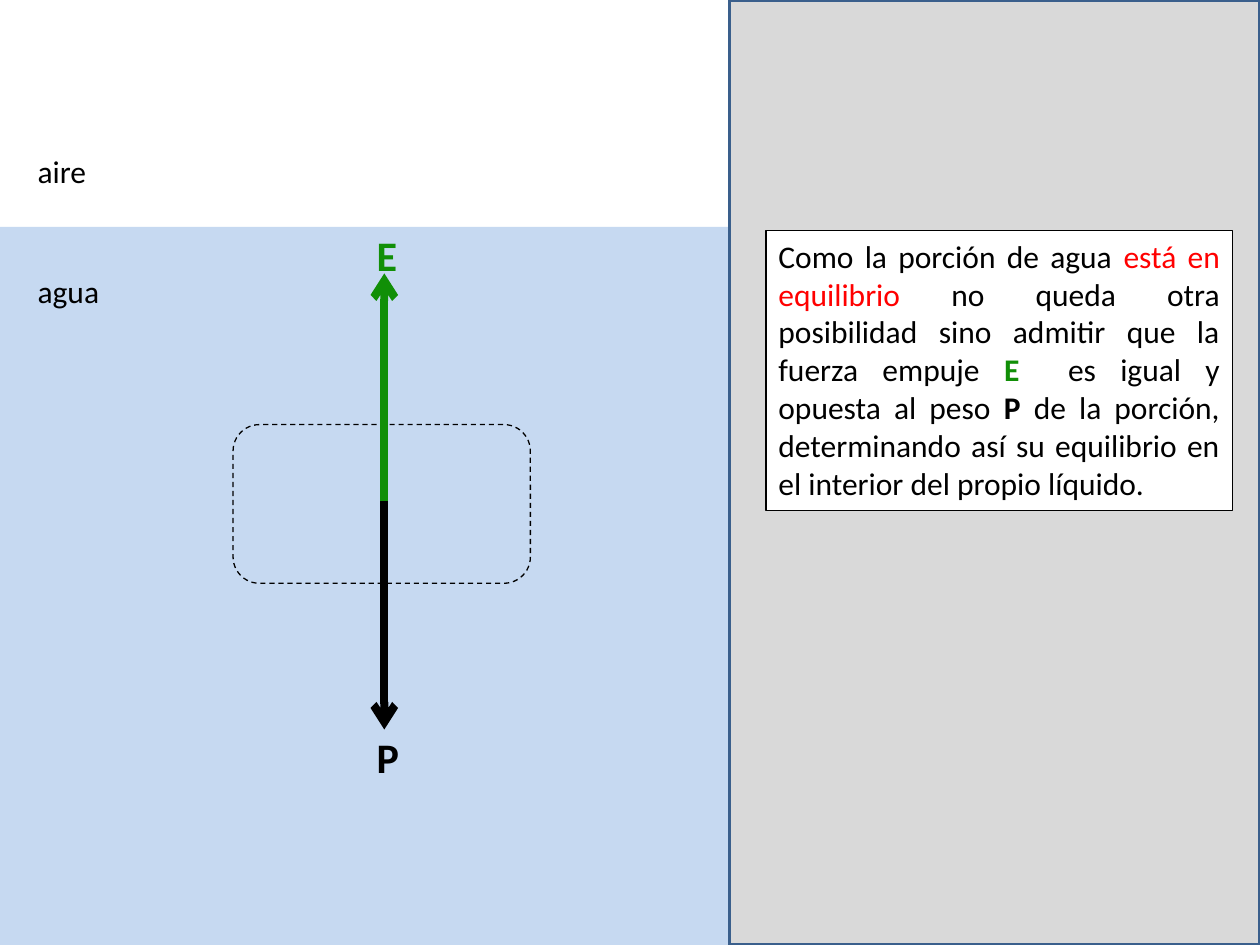
from lxml import etree
from pptx import Presentation
from pptx.dml.color import RGBColor
from pptx.enum.dml import MSO_LINE
from pptx.enum.shapes import MSO_CONNECTOR, MSO_SHAPE
from pptx.enum.text import MSO_ANCHOR, MSO_AUTO_SIZE, PP_ALIGN
from pptx.oxml.ns import qn
from pptx.util import Inches, Pt

RECTANGLE = MSO_SHAPE.RECTANGLE
ROUNDED = MSO_SHAPE.ROUNDED_RECTANGLE
STRAIGHT = MSO_CONNECTOR.STRAIGHT
DASH = MSO_LINE.DASH
TOP = MSO_ANCHOR.TOP
FIT_SHAPE = MSO_AUTO_SIZE.SHAPE_TO_FIT_TEXT
LEFT, JUSTIFY = PP_ALIGN.LEFT, PP_ALIGN.JUSTIFY

WHITE = RGBColor(0xFF, 0xFF, 0xFF)
BLACK = RGBColor(0, 0, 0)
RED = RGBColor(0xFF, 0, 0)
GREEN = RGBColor(0x11, 0x8F, 0x07)
WATER = RGBColor(0xC6, 0xD9, 0xF1)
PANEL = RGBColor(0xD9, 0xD9, 0xD9)
PANEL_EDGE = RGBColor(0x3A, 0x5F, 0x8C)

FONT = "Calibri"
SLIDE_WIDTH, SLIDE_HEIGHT = 10, 7.5
WATER_TOP = 1.8
PANEL_LEFT = 5.79
FORCE_X, FORCE_Y, FORCE_LENGTH = 3.05, 3.98, 1.81

EXPLANATION = [
    ("Como la porción de agua ", BLACK, False),
    ("está en equilibrio", RED, False),
    (" no queda otra posibilidad sino admitir que la fuerza empuje ", BLACK, False),
    ("E", GREEN, True),
    ("  es igual y opuesta al peso ", BLACK, False),
    ("P ", BLACK, True),
    ("de la porción, determinando así su equilibrio en el interior "
     "del propio líquido. ", BLACK, False),
]


def add_block(shapes, kind, left, top, width, height,
              fill=None, edge=None, weight=0.75):
    block = shapes.add_shape(kind, Inches(left), Inches(top),
                             Inches(width), Inches(height))
    block.shadow.inherit = False
    if fill is None:
        block.fill.background()
    else:
        block.fill.solid()
        block.fill.fore_color.rgb = fill
    if edge is None:
        block.line.fill.background()
    else:
        block.line.color.rgb = edge
        block.line.width = Pt(weight)
    return block


def write_text(box, spans, size=18, align=LEFT, wrap=True):
    """Fill a box with one paragraph of (text, colour, bold) spans."""
    frame = box.text_frame
    frame.word_wrap = wrap
    frame.auto_size = FIT_SHAPE
    frame.vertical_anchor = TOP
    para = frame.paragraphs[0]
    para.alignment = align
    for text, colour, bold in spans:
        span = para.add_run()
        span.text = text
        span.font.name = FONT
        span.font.size = Pt(size)
        span.font.bold = bold
        span.font.color.rgb = colour


def add_label(shapes, text, left, top, width, height,
              size=18, colour=BLACK, bold=False):
    box = shapes.add_textbox(Inches(left), Inches(top),
                             Inches(width), Inches(height))
    write_text(box, [(text, colour, bold)], size)


def add_force(shapes, name, direction, label_top, colour):
    """Group a vertical arrow (direction 1 is down, -1 is up) with its name."""
    group = shapes.add_group_shape()
    arrow = group.shapes.add_connector(
        STRAIGHT, Inches(FORCE_X), Inches(FORCE_Y),
        Inches(FORCE_X), Inches(FORCE_Y + direction * FORCE_LENGTH))
    arrow.line.color.rgb = colour
    arrow.line.width = Pt(4.5)
    etree.SubElement(arrow.line._get_or_add_ln(), qn("a:tailEnd"), type="arrow")
    etree.SubElement(arrow._element.spPr, qn("a:effectLst"))
    add_label(group.shapes, name, 2.89, label_top, 0.79, 0.5, 24, colour, True)


def main():
    deck = Presentation()
    deck.slide_width = Inches(SLIDE_WIDTH)
    deck.slide_height = Inches(SLIDE_HEIGHT)
    shapes = deck.slides.add_slide(deck.slide_layouts[6]).shapes

    add_block(shapes, RECTANGLE, 0, WATER_TOP, PANEL_LEFT,
              SLIDE_HEIGHT - WATER_TOP, WATER)
    for medium, top in (("aire", 1.16), ("agua", 2.11)):
        add_label(shapes, medium, 0.2, top, 0.71, 0.4)

    portion = add_block(shapes, ROUNDED, 1.85, 3.37, 2.36, 1.26, edge=BLACK)
    portion.line.dash_style = DASH

    add_block(shapes, RECTANGLE, PANEL_LEFT, 0, SLIDE_WIDTH - PANEL_LEFT,
              SLIDE_HEIGHT, PANEL, PANEL_EDGE, 2)

    add_force(shapes, "P", 1, 5.76, BLACK)
    add_force(shapes, "E", -1, 1.77, GREEN)

    explanation = add_block(shapes, RECTANGLE, 6.08, 1.83, 3.7, 2.22, WHITE, BLACK)
    write_text(explanation, EXPLANATION, align=JUSTIFY)

    deck.save("out.pptx")


if __name__ == "__main__":
    main()
